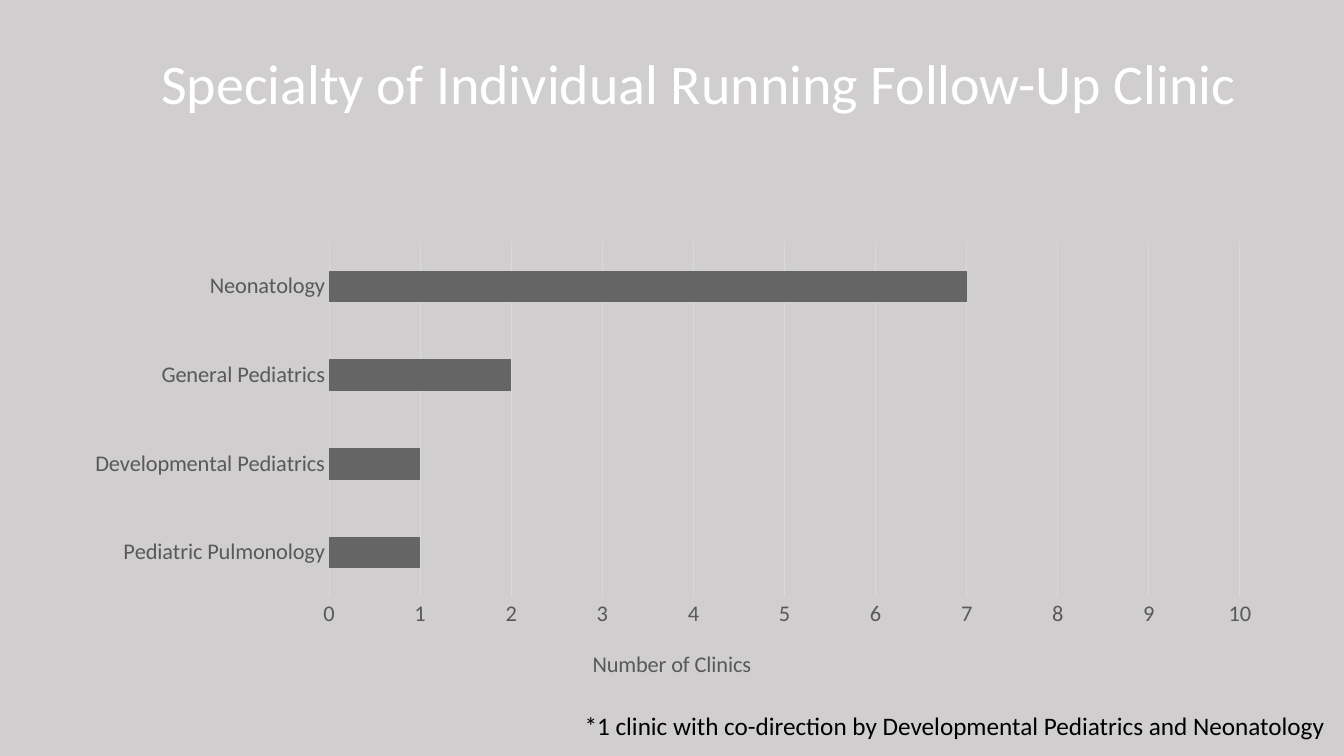
"""Build the slide on which specialties run the follow-up clinics."""
from lxml import etree
from pptx import Presentation
from pptx import util as u
from pptx.chart.data import CategoryChartData
from pptx.dml.color import RGBColor
from pptx.enum import chart as ch, text
from pptx.oxml.ns import qn

HEADING = "Specialty of Individual Running Follow-Up Clinic"
FOOTNOTE = "*1 clinic with co-direction by Developmental Pediatrics and Neonatology"
AXIS_LABEL = "Number of Clinics"
CLINICS = {
    "Pediatric Pulmonology": 1,
    "Developmental Pediatrics": 1,
    "General Pediatrics": 2,
    "Neonatology": 7,
}
FONT = "Calibri"
BACKDROP = RGBColor(0xD0, 0xCE, 0xCE)
WHITE = RGBColor(0xFF, 0xFF, 0xFF)
BLACK = RGBColor(0, 0, 0)
BAR = RGBColor(0x65, 0x65, 0x65)
LABEL = RGBColor(0x59, 0x59, 0x59)
GRID = RGBColor(0xD9, 0xD9, 0xD9)
HEADING_BOX = (1.5, 0.38, 10.98, 0.96)
CHART_BOX = (0.7, 2.31, 11.95, 4.59)
FOOTNOTE_BOX = (5.7, 7, 7.63, 0.4)
PLOT_SHARE = {"x": 0.2145, "y": 0.02, "w": 0.756, "h": 0.767}
AXIS_LABEL_SHARE = {"x": 0.43, "y": 0.89}


def inches(box):
    return [u.Inches(length) for length in box]


def style(font, size, color):
    font.name, font.size, font.bold = FONT, u.Pt(size), False
    font.color.rgb = color


def add_line(slide, box, words, size, color, wrap):
    frame = slide.shapes.add_textbox(*inches(box)).text_frame
    frame.word_wrap = wrap
    frame.text = words
    style(frame.paragraphs[0].runs[0].font, size, color)
    return frame


def place(parent, index, shares, inner=False):
    for old in parent.findall(qn("c:layout")):
        parent.remove(old)
    layout = etree.Element(qn("c:layout"))
    manual = etree.SubElement(layout, qn("c:manualLayout"))
    settings = {"layoutTarget": "inner"} if inner else {}
    settings |= {f"{side}Mode": "edge" for side in "xy"} | shares
    for tag, value in settings.items():
        etree.SubElement(manual, qn(f"c:{tag}")).set("val", str(value))
    parent.insert(index, layout)


def add_clinic_chart(slide):
    data = CategoryChartData()
    data.categories = list(CLINICS)
    data.add_series("Series 1", list(CLINICS.values()))
    chart = slide.shapes.add_chart(
        ch.XL_CHART_TYPE.BAR_CLUSTERED, *inches(CHART_BOX), data).chart
    style(chart.font, 16, BLACK)
    chart.has_legend = chart.has_title = False

    bars = chart.plots[0]
    bars.gap_width, bars.vary_by_categories = 182, False
    bars.series[0].format.fill.solid()
    bars.series[0].format.fill.fore_color.rgb = BAR

    specialties, counts = chart.category_axis, chart.value_axis
    for axis in (specialties, counts):
        axis.major_tick_mark = axis.minor_tick_mark = ch.XL_TICK_MARK.NONE
        style(axis.tick_labels.font, 16, LABEL)
    counts.minimum_scale, counts.maximum_scale, counts.major_unit = 0, 10, 1
    counts.format.line.fill.background()
    for line in (specialties.format.line, counts.major_gridlines.format.line):
        line.color.rgb, line.width = GRID, u.Pt(0.75)

    label = counts.axis_title
    label.text_frame.text = AXIS_LABEL
    style(label.text_frame.paragraphs[0].runs[0].font, 16, LABEL)
    place(label._element, 1, AXIS_LABEL_SHARE)
    place(chart._chartSpace.chart.plotArea, 0, PLOT_SHARE, inner=True)


def main():
    deck = Presentation()
    deck.slide_width, deck.slide_height = u.Inches(13.33), u.Inches(7.5)
    slide = deck.slides.add_slide(deck.slide_layouts[6])
    slide.background.fill.solid()
    slide.background.fill.fore_color.rgb = BACKDROP

    heading = add_line(slide, HEADING_BOX, HEADING, 40, WHITE, True)
    heading.vertical_anchor = text.MSO_ANCHOR.MIDDLE
    heading.paragraphs[0].line_spacing = 0.9
    add_clinic_chart(slide)
    footnote = add_line(slide, FOOTNOTE_BOX, FOOTNOTE, 18, BLACK, False)
    footnote.auto_size = text.MSO_AUTO_SIZE.SHAPE_TO_FIT_TEXT
    footnote.paragraphs[0].space_after = u.Pt(6)
    deck.save("out.pptx")


if __name__ == "__main__":
    main()
